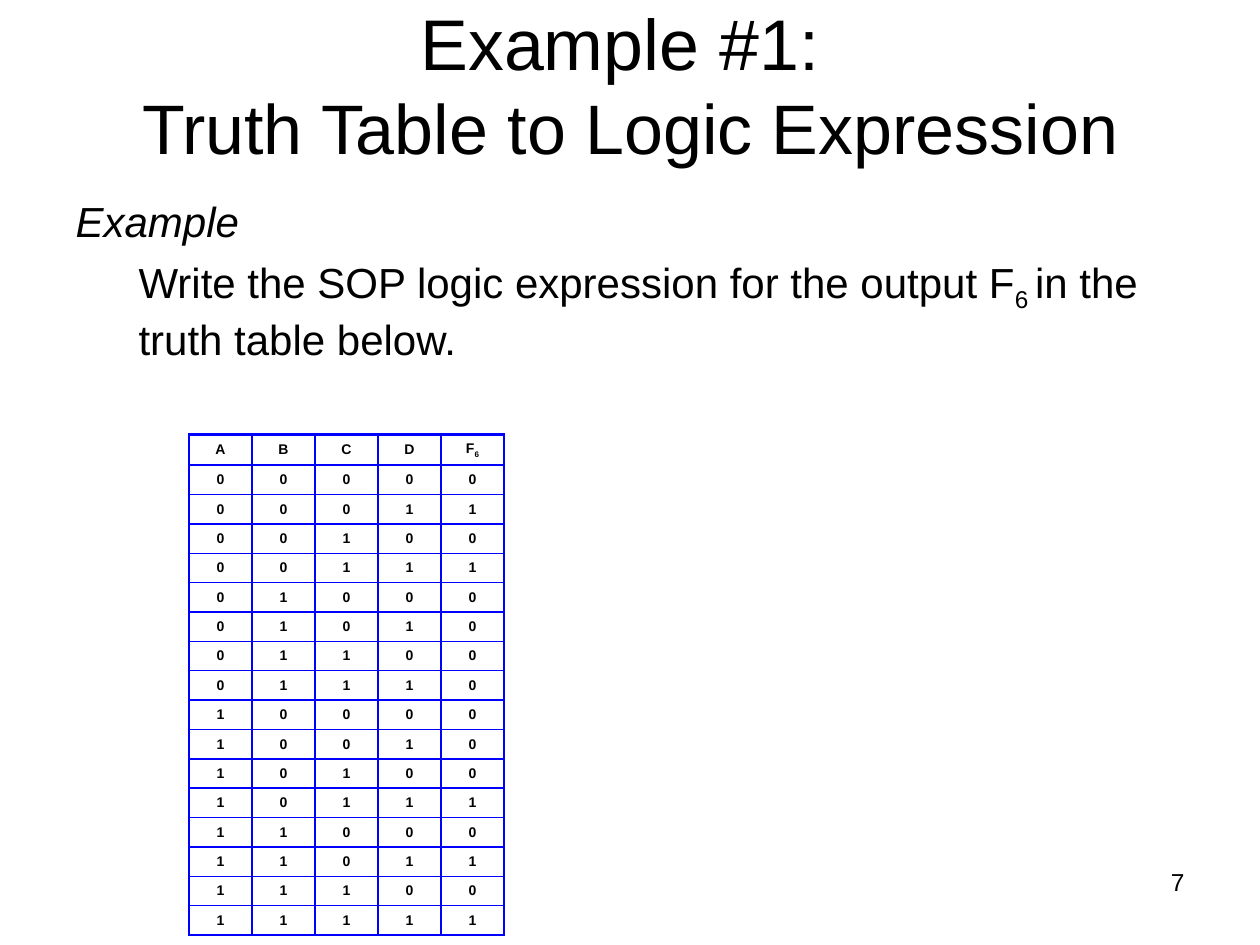
from dataclasses import dataclass
from itertools import product

from lxml import etree
from pptx import Presentation
from pptx import util as u
from pptx.dml import color
from pptx.enum import text as t
from pptx.oxml import ns


@dataclass(frozen=True)
class Theme:
    """Colours, type sizes and line widths of the slide."""
    font: str = "Arial"
    ink: str = "000000"
    paper: str = "FFFFFF"
    grid: str = "0000FF"
    title_top: int = 41
    title: int = 40
    body: int = 24
    cell: int = 8
    page: int = 14
    thick: float = 1.5
    thin: float = 1


THEME = Theme()
VARIABLES = "ABCD"
MINTERMS = {1, 3, 11, 13, 15}


def write(paragraph, wording, *, size, bold=False, italic=False, subscript=False):
    """Append a formatted run to a paragraph."""
    run = paragraph.add_run()
    run.text = wording
    font = run.font
    font.name, font.size = THEME.font, u.Pt(size)
    font.bold, font.italic = bold, italic
    font.color.rgb = color.RGBColor.from_string(THEME.ink)
    if subscript:
        run._r.get_or_add_rPr().set("baseline", "-25000")


def place(region, box):
    """Move a region to its box, given in centimetres."""
    region.left, region.top, region.width, region.height = map(u.Cm, box)


def indent(paragraph, left):
    """Remove the bullet and set the left indent."""
    properties = paragraph._p.get_or_add_pPr()
    properties.set("marL", str(u.Cm(left)))
    properties.set("indent", "0")
    etree.SubElement(properties, ns.qn("a:buNone"))


def fill_title(slide, box):
    """Set the two-line title."""
    title = slide.shapes.title
    place(title, box)
    frame = title.text_frame
    frame.auto_size = t.MSO_AUTO_SIZE.NONE
    frame.vertical_anchor = t.MSO_ANCHOR.MIDDLE
    heading = frame.paragraphs[0]
    heading.alignment = t.PP_ALIGN.CENTER
    write(heading, "Example #1: ", size=THEME.title_top)
    heading.add_line_break()
    write(heading, "Truth Table to Logic Expression", size=THEME.title)


def fill_task(slide, box):
    """Set the example label and its task."""
    body = slide.placeholders[1]
    place(body, box)
    frame = body.text_frame
    frame.auto_size = t.MSO_AUTO_SIZE.NONE
    label, task = frame.paragraphs[0], frame.add_paragraph()
    task.level = 1
    indent(label, 0)
    indent(task, 1.27)
    label.space_before = task.space_before = u.Pt(0)
    label.space_after = u.Pt(6)
    write(label, "Example", size=THEME.body, italic=True)
    write(task, "Write the SOP logic expression for the output F", size=THEME.body)
    write(task, "6 ", size=THEME.body, subscript=True)
    write(task, "in the truth table below.", size=THEME.body)


def draw_borders(cell, widths):
    """Draw the left, right, top and bottom borders of a cell."""
    properties = cell._tc.get_or_add_tcPr()
    for side, width in zip("LRTB", widths):
        line = etree.SubElement(properties, ns.qn(f"a:ln{side}"), w=str(u.Pt(width)))
        solid = etree.SubElement(line, ns.qn("a:solidFill"))
        etree.SubElement(solid, ns.qn("a:srgbClr"), val=THEME.grid)


def add_truth_table(slide, box):
    """Add the truth table, ruled heavily round the edge, header and output."""
    rows = [[*VARIABLES, "F"]]
    for number, inputs in enumerate(product((0, 1), repeat=len(VARIABLES))):
        rows.append([*inputs, int(number in MINTERMS)])
    height, width = len(rows), len(rows[0])
    table = slide.shapes.add_table(height, width, *map(u.Cm, box)).table
    table.first_row = table.horz_banding = False
    heavy_columns, heavy_rows = {0, width - 1, width}, {0, 1, height}
    for r, values in enumerate(rows):
        for c, value in enumerate(values):
            cell = table.cell(r, c)
            heavy = (c in heavy_columns, c + 1 in heavy_columns,
                     r in heavy_rows, r + 1 in heavy_rows)
            draw_borders(cell, [THEME.thick if h else THEME.thin for h in heavy])
            cell.fill.solid()
            cell.fill.fore_color.rgb = color.RGBColor.from_string(THEME.paper)
            cell.vertical_anchor = t.MSO_ANCHOR.MIDDLE
            entry = cell.text_frame.paragraphs[0]
            entry.alignment = t.PP_ALIGN.CENTER
            write(entry, str(value), size=THEME.cell, bold=True)
    output = table.cell(0, width - 1).text_frame.paragraphs[0]
    write(output, "6", size=THEME.cell, bold=True, subscript=True)


def add_page_number(slide, box):
    """Add the page number at the lower right."""
    frame = slide.shapes.add_textbox(*map(u.Cm, box)).text_frame
    frame.word_wrap = True
    number = frame.paragraphs[0]
    number.alignment = t.PP_ALIGN.RIGHT
    write(number, "7", size=THEME.page)


def main():
    """Build and save the slide."""
    deck = Presentation()
    deck.slide_width, deck.slide_height = u.Cm(25.4), u.Cm(19.05)
    slide = deck.slides.add_slide(deck.slide_layouts[1])
    fill_title(slide, (0, 0, 25.4, 3.38))
    fill_task(slide, (1.27, 3.81, 22.66, 4.52))
    add_truth_table(slide, (3.81, 8.76, 6.35, 10.08))
    add_page_number(slide, (18.21, 17.35, 5.92, 1.32))
    deck.save("out.pptx")


if __name__ == "__main__":
    main()
